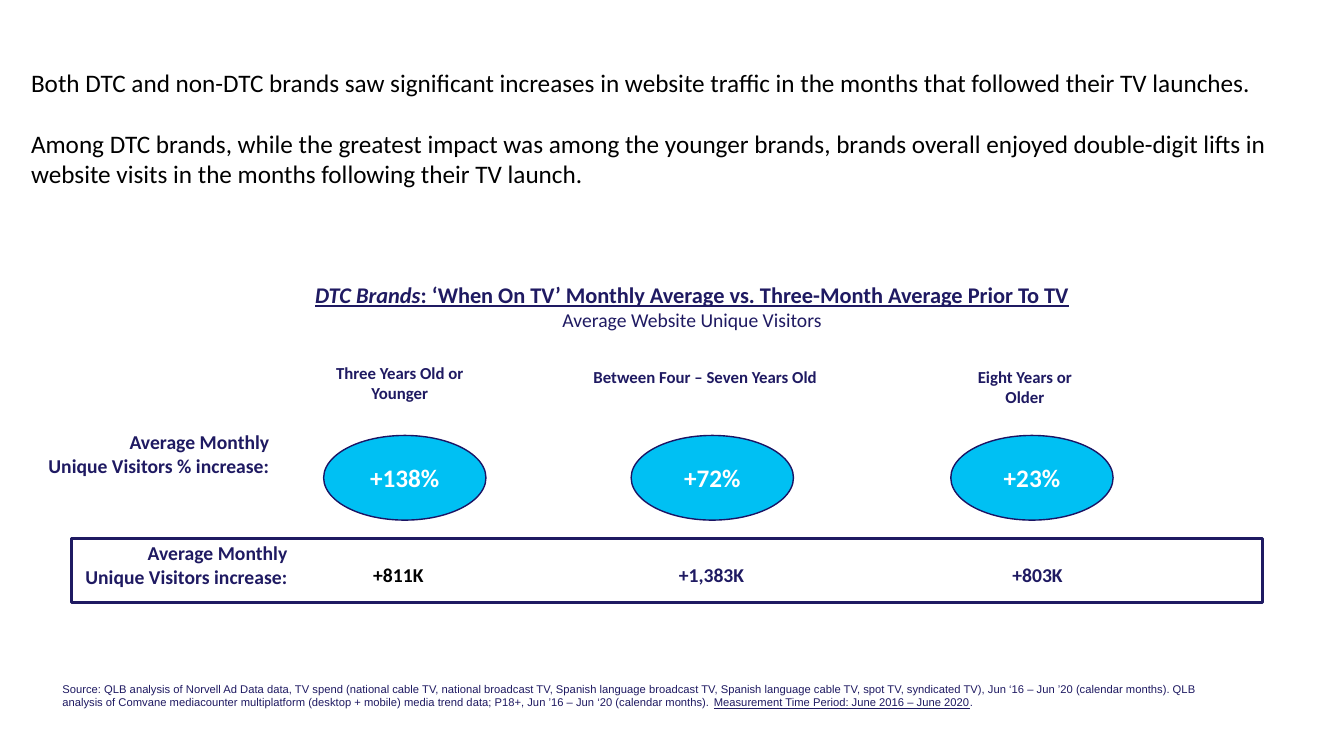
from pptx import Presentation
from pptx.dml.color import RGBColor
from pptx.enum.shapes import MSO_SHAPE
from pptx.enum.text import MSO_ANCHOR, PP_ALIGN
from pptx.util import Inches, Pt

LEFT, MID, RIGHT = PP_ALIGN.LEFT, PP_ALIGN.CENTER, PP_ALIGN.RIGHT
OVAL, RECT = MSO_SHAPE.OVAL, MSO_SHAPE.RECTANGLE
NAVY, CYAN, BLACK, WHITE = "1F1A62", "00C0F3", "000000", "FFFFFF"

deck = Presentation()
deck.slide_width, deck.slide_height = Inches(13.33), Inches(7.5)
slide = deck.slides.add_slide(deck.slide_layouts[6])


def write(item, lines, size=14, color=NAVY, bold=True, align=LEFT, font="Calibri", before=0):
    """Fill a shape or box; each line is a list of (text, format) runs."""
    frame = item.text_frame
    frame.word_wrap = True
    for i, line in enumerate(lines):
        para = frame.paragraphs[0] if i == 0 else frame.add_paragraph()
        para.alignment = align
        para.space_before = Pt(before)
        for text, look in line:
            run = para.add_run()
            run.text = text
            run.font.name = font
            run.font.size = Pt(look.get("size", size))
            run.font.bold = look.get("bold", bold)
            run.font.italic = look.get("italic", False)
            run.font.underline = look.get("under", False)
            run.font.color.rgb = RGBColor.from_string(color)
    return frame


def draw(kind, x, y, w, h, fill, line, width):
    """Add a filled, outlined shape, or a plain text box if kind is None."""
    spot = [Inches(v) for v in (x, y, w, h)]
    if kind is None:
        return slide.shapes.add_textbox(*spot)
    item = slide.shapes.add_shape(kind, *spot)
    item.shadow.inherit = False
    item.fill.solid()
    item.fill.fore_color.rgb = RGBColor.from_string(fill)
    item.line.color.rgb = RGBColor.from_string(line)
    item.line.width = Pt(width)
    return item


# Opening text
box = draw(None, 0.21, 0.62, 13, 1.31, None, None, 0)
frame = write(box, [
    [("Both DTC and non-DTC brands saw significant increases in website traffic "
      "in the months that followed their TV launches.", {})],
    [("Among DTC brands, while the greatest impact was among the younger brands, "
      "brands overall enjoyed double-digit lifts in website visits in the months "
      "following their TV launch.", {})],
], size=18, color=BLACK, bold=False)
frame.paragraphs[1].space_before = Pt(22)

# Frame of the bottom row
draw(RECT, 0.71, 5.34, 11.81, 0.64, WHITE, NAVY, 2.25)

# Heading
box = draw(None, 0.96, 2.74, 11.81, 0.61, None, None, 0)
write(box, [
    [("DTC Brands", {"italic": True, "under": True}),
     (": ‘When On TV’ Monthly Average vs. Three-Month Average Prior To TV", {"under": True})],
    [("Average Website Unique Visitors", {"size": 14, "bold": False})],
], size=16, align=MID)

# Age groups: name and its x, y, width; lift and x; gain, x, width and colour
groups = [
    ("Three Years Old or Younger", 3.04, 3.55, 1.85, "+138%", 3.21, "+811K", 3.34, 0.96, BLACK),
    ("Between Four – Seven Years Old", 5.61, 3.59, 2.77, "+72%", 6.26, "+1,383K", 6.43, 1.05, NAVY),
    ("Eight Years or Older", 9.43, 3.59, 1.47, "+23%", 9.43, "+803K", 9.68, 0.96, NAVY),
]
for name, x, y, w, lift, oval_x, gain, gain_x, gain_w, color in groups:
    box = draw(None, x, y, w, 0.5, None, None, 0)
    write(box, [[(name, {})]], size=12, align=MID)
    oval = draw(OVAL, oval_x, 4.32, 1.61, 0.84, CYAN, "1B1464", 1)
    frame = write(oval, [[(lift, {})]], size=18, color=WHITE, align=MID)
    frame.vertical_anchor = MSO_ANCHOR.MIDDLE
    box = draw(None, gain_x, 5.54, gain_w, 0.34, None, None, 0)
    write(box, [[(gain, {})]], color=color, align=RIGHT)

# Row labels
for x, y, label in [(0.2, 4.22, "Unique Visitors % increase:"),
                    (0.38, 5.32, "Unique Visitors increase:")]:
    box = draw(None, x, y, 2.57, 0.57, None, None, 0)
    write(box, [[("Average Monthly", {})], [(label, {})]], align=RIGHT)

# Source note
box = draw(None, 0.52, 6.72, 11.56, 0.38, None, None, 0)
write(box, [[
    ("Source: QLB analysis of Norvell Ad Data data, TV spend (national cable TV, national "
     "broadcast TV, Spanish language broadcast TV, Spanish language cable TV, spot TV, "
     "syndicated TV), Jun ‘16 – Jun ’20 (calendar months). QLB analysis of Comvane "
     "mediacounter multiplatform (desktop + mobile) media trend data; P18+, "
     "Jun ’16 – Jun ‘20 (calendar months). ", {}),
    ("Measurement Time Period: June 2016 – June 2020", {"under": True}),
    (".", {}),
]], size=8, bold=False, font="Arial", before=1.6)

deck.save("out.pptx")
